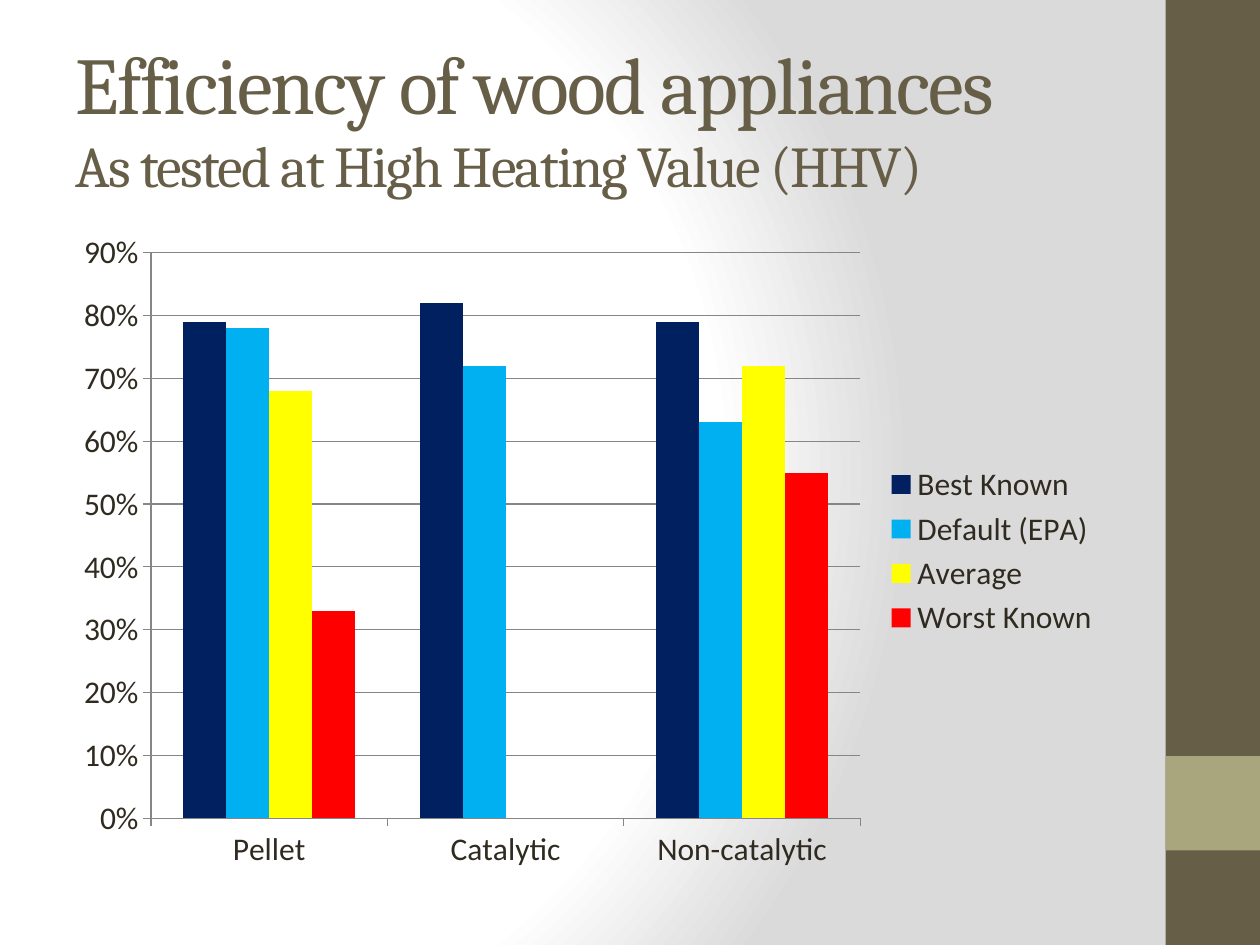
from lxml import etree
from pptx import Presentation
from pptx.chart.data import CategoryChartData
from pptx.dml.color import RGBColor
from pptx.enum.chart import XL_CHART_TYPE, XL_LEGEND_POSITION, XL_TICK_MARK
from pptx.enum.shapes import MSO_SHAPE
from pptx.enum.text import MSO_ANCHOR
from pptx.oxml.ns import qn
from pptx.util import Inches, Pt

COLUMNS = XL_CHART_TYPE.COLUMN_CLUSTERED
RIGHT = XL_LEGEND_POSITION.RIGHT
OUTSIDE = XL_TICK_MARK.OUTSIDE
RECTANGLE = MSO_SHAPE.RECTANGLE
MIDDLE = MSO_ANCHOR.MIDDLE

BROWN, TAN, INK, GRID = "675E47", "A9A57C", "2F2B20", "868686"
LEFT, WIDTH = 0.5, 8.33

TITLE = [
    ("Efficiency of wood appliances", 46),
    ("As tested at High Heating Value (HHV)", 33),
]
CATEGORIES = ["Pellet", "Catalytic", "Non-catalytic"]
SERIES = [
    ("Best Known", "002060", (0.79, 0.82, 0.79)),
    ("Default (EPA)", "00B0F0", (0.78, 0.72, 0.63)),
    ("Average", "FFFF00", (0.68, None, 0.72)),
    ("Worst Known", "FF0000", (0.33, None, 0.55)),
]
SIDE_BARS = [
    ((9.25, 0, 0.75, 7.5), BROWN),
    ((9.25, 6, 0.75, 0.75), TAN),
]
BACKGROUND_STOPS = [(0, "FFFFFF"), (75, "FFFFFF"), (100, "DADADA")]
BACKGROUND_FOCUS = {"l": 20, "t": 50, "r": 100, "b": 50}


def color(value):
    return RGBColor.from_string(value)


def place(*lengths):
    return [Inches(length) for length in lengths]


def set_format(target, values):
    for name, value in values.items():
        setattr(target, name, value)


def percent(value):
    return str(value * 1000)


def paint_background(page):
    page.background.fill.gradient()
    gradient = next(page.element.iter(qn("a:gradFill")))
    for child in list(gradient):
        gradient.remove(child)
    stops = etree.SubElement(gradient, qn("a:gsLst"))
    for position, value in BACKGROUND_STOPS:
        stop = etree.SubElement(stops, qn("a:gs"), pos=percent(position))
        etree.SubElement(stop, qn("a:srgbClr"), val=value)
    circle = etree.SubElement(gradient, qn("a:path"), path="circle")
    focus = {side: percent(value) for side, value in BACKGROUND_FOCUS.items()}
    etree.SubElement(circle, qn("a:fillToRect"), focus)


def add_side_bars(page):
    for bounds, value in SIDE_BARS:
        bar = page.shapes.add_shape(RECTANGLE, *place(*bounds))
        bar.shadow.inherit = False
        bar.fill.solid()
        bar.fill.fore_color.rgb = color(value)
        bar.line.fill.background()


def add_title(page):
    box = page.shapes.add_textbox(*place(LEFT, 0.3, WIDTH, 1.25))
    set_format(box.text_frame, {"word_wrap": True, "vertical_anchor": MIDDLE})
    para = box.text_frame.paragraphs[0]
    for index, (words, size) in enumerate(TITLE):
        if index:
            para.add_line_break()
        span = para.add_run()
        span.text = words
        set_format(span.font, {"name": "Cambria", "size": Pt(size)})
        span.font.color.rgb = color(BROWN)
        span.font._element.set("spc", "-100")


def add_efficiency_chart(page):
    data = CategoryChartData(number_format="0%")
    data.categories = CATEGORIES
    for name, _, values in SERIES:
        data.add_series(name, values)
    bounds = place(LEFT, 1.75, WIDTH, 5.25)
    chart = page.shapes.add_chart(COLUMNS, *bounds, data).chart
    set_format(chart, {"has_title": False, "has_legend": True})
    set_format(chart.font, {"name": "Calibri", "size": Pt(18)})
    chart.font.color.rgb = color(INK)
    set_format(chart.legend, {"position": RIGHT, "include_in_layout": False})

    plot = chart.plots[0]
    set_format(plot, {"gap_width": 150, "overlap": 0, "vary_by_categories": False})
    for series, (_, value, _) in zip(plot.series, SERIES):
        series.format.fill.solid()
        series.format.fill.fore_color.rgb = color(value)

    values_axis = chart.value_axis
    set_format(values_axis, {
        "minimum_scale": 0, "maximum_scale": 0.9, "major_unit": 0.1,
        "has_major_gridlines": True,
    })
    set_format(values_axis.tick_labels,
               {"number_format": "0%", "number_format_is_linked": False})
    for axis in (chart.category_axis, values_axis):
        axis.major_tick_mark = OUTSIDE
    for part in (chart.category_axis, values_axis, values_axis.major_gridlines):
        part.format.line.color.rgb = color(GRID)
        part.format.line.width = Pt(0.75)


def main():
    deck = Presentation()
    set_format(deck, {"slide_width": Inches(10), "slide_height": Inches(7.5)})
    page = deck.slides.add_slide(deck.slide_layouts[6])
    paint_background(page)
    add_side_bars(page)
    add_title(page)
    add_efficiency_chart(page)
    deck.save("out.pptx")


if __name__ == "__main__":
    main()
